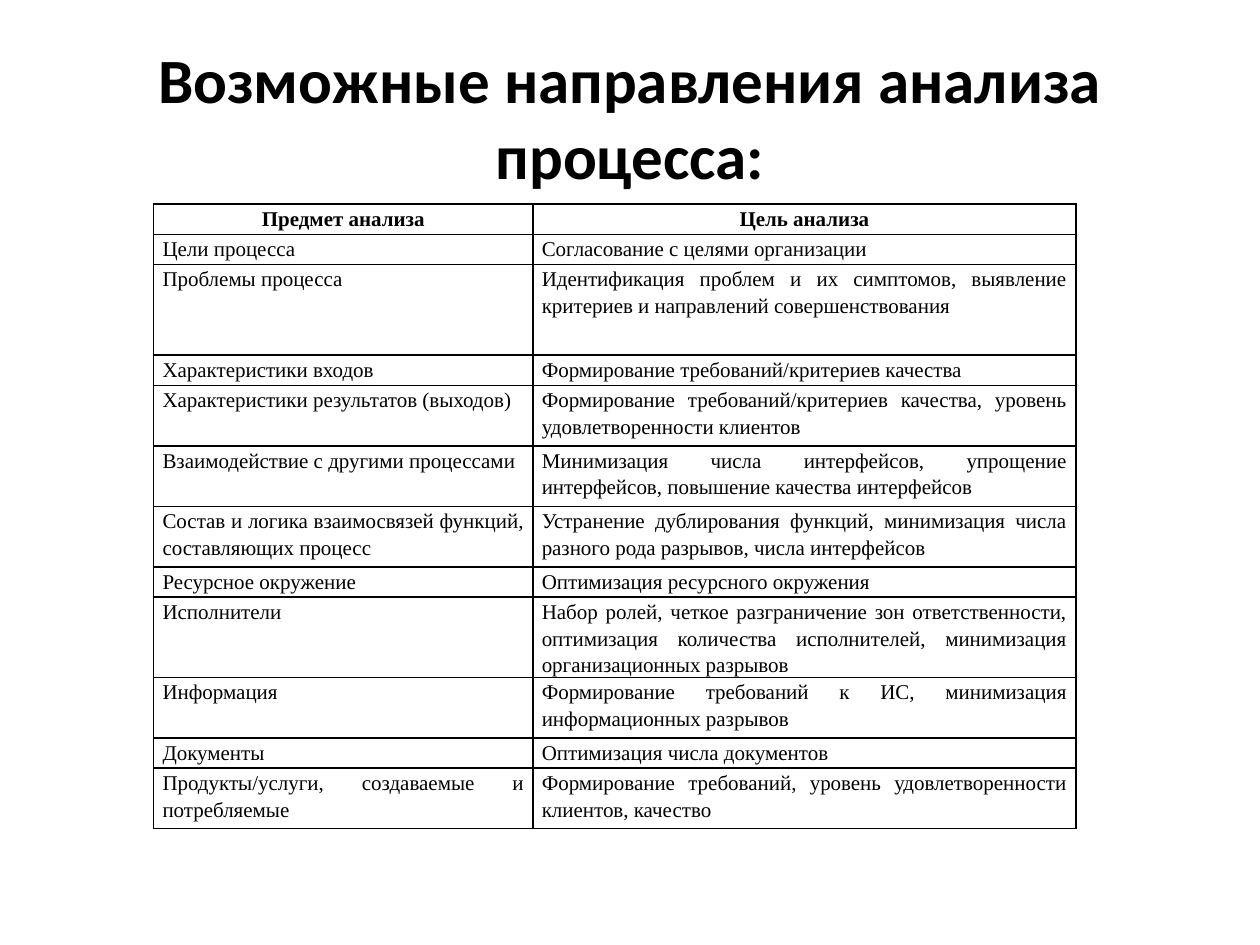
from dataclasses import dataclass

from lxml.etree import SubElement as Sub
from pptx import Presentation
from pptx.dml.color import RGBColor as Rgb
from pptx.enum.text import MSO_ANCHOR as Anchor, PP_ALIGN as Align
from pptx.oxml.ns import qn
from pptx.util import Inches, Pt


@dataclass(frozen=True)
class Theme:
    ink: str = "000000"
    head: str = "Calibri"
    body: str = "Times New Roman"
    big: int = 36
    small: int = 12
    rule: int = 1


THEME = Theme()
TITLE = "Возможные направления анализа процесса:"
LINE = 0.24
COLS = (3.01, 4.31)
ROWS = [
    (LINE, "Предмет анализа", "Цель анализа"),
    (LINE, "Цели процесса", "Согласование с целями организации"),
    (3 * LINE, "Проблемы процесса",
     "Идентификация проблем и их симптомов, выявление критериев и направлений совершенствования"),
    (LINE, "Характеристики входов", "Формирование требований/критериев качества"),
    (2 * LINE, "Характеристики результатов (выходов)",
     "Формирование требований/критериев качества, уровень удовлетворенности клиентов"),
    (2 * LINE, "Взаимодействие с другими процессами",
     "Минимизация числа интерфейсов, упрощение интерфейсов, повышение качества интерфейсов"),
    (2 * LINE, "Состав и логика взаимосвязей функций, составляющих процесс",
     "Устранение дублирования функций, минимизация числа разного рода разрывов, числа интерфейсов"),
    (LINE, "Ресурсное окружение", "Оптимизация ресурсного окружения"),
    (0.58, "Исполнители",
     "Набор ролей, четкое разграничение зон ответственности, оптимизация количества исполнителей, "
     "минимизация организационных разрывов"),
    (2 * LINE, "Информация",
     "Формирование требований к ИС, минимизация информационных разрывов"),
    (LINE, "Документы", "Оптимизация числа документов"),
    (2 * LINE, "Продукты/услуги, создаваемые и потребляемые",
     "Формирование требований, уровень удовлетворенности клиентов, качество"),
]


def style(para, face, size, bold, align):
    para.alignment = align
    for run in para.runs:
        font = run.font
        font.name, font.size, font.bold = face, Pt(size), bold
        font.color.rgb = Rgb.from_string(THEME.ink)


def border(cell):
    props = cell._tc.get_or_add_tcPr()
    for side in ("lnL", "lnR", "lnT", "lnB"):
        line = Sub(props, qn(f"a:{side}"), w=str(Pt(THEME.rule)))
        fill = Sub(line, qn("a:solidFill"))
        Sub(fill, qn("a:srgbClr"), val=THEME.ink)


def add_title(slide, box):
    shape = slide.shapes.title
    shape.left, shape.top, shape.width, shape.height = map(Inches, box)
    frame = shape.text_frame
    frame.text = TITLE
    frame.word_wrap = True
    frame.vertical_anchor = Anchor.MIDDLE
    style(frame.paragraphs[0], THEME.head, THEME.big, True, Align.CENTER)


def fill_cell(cell, text, head):
    cell.margin_left = cell.margin_right = Inches(0.07)
    cell.margin_top = cell.margin_bottom = 0
    cell.text = text
    para = cell.text_frame.paragraphs[0]
    para.line_spacing = 1.15
    style(para, THEME.body, THEME.small, head, Align.CENTER if head else Align.JUSTIFY)
    border(cell)
    cell.fill.background()


def add_grid(slide, box):
    frame = slide.shapes.add_table(len(ROWS), len(COLS), *map(Inches, box))
    table = frame.table
    table.first_row = table.horz_banding = False
    for col, width in zip(table.columns, COLS):
        col.width = Inches(width)
    for i, (height, *texts) in enumerate(ROWS):
        table.rows[i].height = Inches(height)
        for j, text in enumerate(texts):
            fill_cell(table.cell(i, j), text, i == 0)
    frame.height = Inches(box[3])


def main():
    deck = Presentation()
    deck.slide_width, deck.slide_height = Inches(10), Inches(7.5)
    slide = deck.slides.add_slide(deck.slide_layouts[5])
    add_title(slide, (0.5, 0.3, 9, 1.25))
    add_grid(slide, (1.22, 1.62, sum(COLS), 5.01))
    deck.save("out.pptx")


if __name__ == "__main__":
    main()
